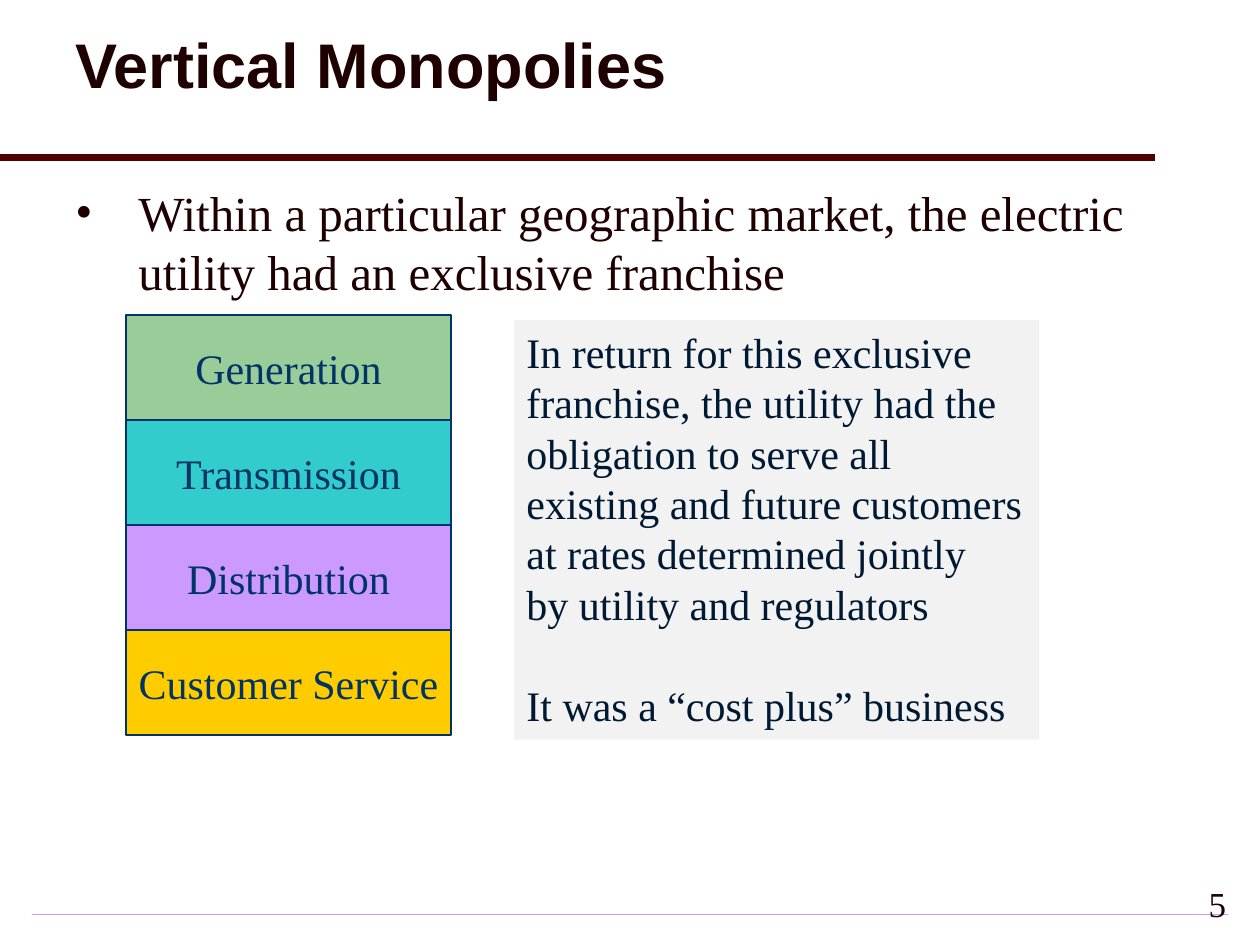
from dataclasses import dataclass

from lxml import etree
from pptx import Presentation
from pptx import util as u
from pptx.dml.color import RGBColor
from pptx.enum import shapes, text
from pptx.oxml import parse_xml
from pptx.oxml.ns import nsdecls, qn

SERIF = "Times New Roman"
DARK = "1E0000"
NAVY = "003366"
LEFT, MID, RIGHT = text.PP_ALIGN.LEFT, text.PP_ALIGN.CENTER, text.PP_ALIGN.RIGHT
TOP, HALF = text.MSO_ANCHOR.TOP, text.MSO_ANCHOR.MIDDLE


@dataclass
class Box:
    left: float
    top: float
    width: float
    height: float

    def place(self) -> list:
        return [u.Inches(v) for v in (self.left, self.top, self.width, self.height)]


@dataclass
class Stage:
    name: str
    fill: str


STAGES = [
    Stage("Generation", "99CC99"),
    Stage("Transmission", "33CCCC"),
    Stage("Distribution", "CC99FF"),
    Stage("Customer Service", "FFCC00"),
]
DUTY = [
    "In return for this exclusive",
    "franchise, the utility had the",
    "obligation to serve all",
    "existing and future customers",
    "at rates determined jointly",
    "by utility and regulators",
    "It was a “cost plus” business",
]


def tint(target, code: str) -> None:
    target.rgb = RGBColor.from_string(code)


def write(shape, lines: list, size: float, color: str, align=LEFT, anchor=TOP,
          wrap: bool = True, face: str = SERIF, bold: bool = False) -> list:
    frame = shape.text_frame
    frame.word_wrap = wrap
    frame.vertical_anchor = anchor
    frame.text = "\n".join(lines)
    look = {"name": face, "size": u.Pt(size), "bold": bold}
    for para in frame.paragraphs:
        para.alignment = align
        for run in para.runs:
            for key, value in look.items():
                setattr(run.font, key, value)
            tint(run.font.color, color)
    return list(frame.paragraphs)


def block(slide, box: Box, fill: str, edge: str = ""):
    shape = slide.shapes.add_shape(shapes.MSO_SHAPE.RECTANGLE, *box.place())
    shape.shadow.inherit = False
    shape.fill.solid()
    tint(shape.fill.fore_color, fill)
    if edge:
        tint(shape.line.color, edge)
        shape.line.width = u.Pt(0.75)
    else:
        shape.line.fill.background()
    return shape


def label(slide, box: Box):
    return slide.shapes.add_textbox(*box.place())


def draw_frame(slide) -> None:
    strip = block(slide, Box(0.25, 7.25, 9.5, 0.01), "CC99FF")
    strip.fill.gradient()
    for stop, code in zip(strip.fill.gradient_stops, ("CC99FF", "F3EBFF")):
        tint(stop.color, code)
    grad = strip.fill._xPr.find(qn("a:gradFill"))
    grad.replace(grad.find(qn("a:lin")), parse_xml(
        f'<a:path {nsdecls("a")} path="shape">'
        '<a:fillToRect l="50000" t="50000" r="50000" b="50000"/></a:path>'))

    rule = slide.shapes.add_connector(
        shapes.MSO_CONNECTOR.STRAIGHT,
        u.Inches(0), u.Inches(1.25), u.Inches(9.17), u.Inches(1.25))
    tint(rule.line.color, "500000")
    rule.line.width = u.Pt(4)
    etree.SubElement(rule._element.spPr, qn("a:effectLst"))

    write(label(slide, Box(7.75, 6.92, 2.08, 0.5)), ["5"], 20, DARK, RIGHT, HALF)


def draw_head(slide) -> None:
    title = write(label(slide, Box(0.5, 0.08, 8.75, 0.92)), ["Vertical Monopolies"],
                  36, DARK, anchor=HALF, face="Arial", bold=True)[0]
    title.line_spacing = 0.9

    point = write(label(slide, Box(0.5, 1.4, 8.75, 5.08)),
                  ["Within a particular geographic market, the electric "
                   "utility had an exclusive franchise"], 28, DARK)[0]
    props = point._p.get_or_add_pPr()
    props.set("marL", str(u.Inches(0.5)))
    props.set("indent", str(u.Inches(-0.5)))
    etree.SubElement(props, qn("a:buFont"), typeface=SERIF)
    etree.SubElement(props, qn("a:buChar"), char="•")


def draw_stack(slide) -> None:
    step = 2.5 / 3
    for row, stage in enumerate(STAGES):
        box = Box(1, 2.5 + row * step, 2.58, step)
        shape = block(slide, box, stage.fill, NAVY)
        write(shape, [stage.name], 24, NAVY, MID, HALF, wrap=False)


def draw_duty(slide) -> None:
    panel = block(slide, Box(4.08, 2.54, 4.17, 3.33), "F2F2F2")
    lines = write(panel, DUTY, 24, "001933", wrap=False)
    lines[-1].space_before = u.Pt(28.8)


def main() -> None:
    deck = Presentation()
    deck.slide_width, deck.slide_height = u.Inches(10), u.Inches(7.5)
    slide = deck.slides.add_slide(deck.slide_layouts[6])
    for draw in (draw_frame, draw_head, draw_stack, draw_duty):
        draw(slide)
    deck.save("out.pptx")


if __name__ == "__main__":
    main()
